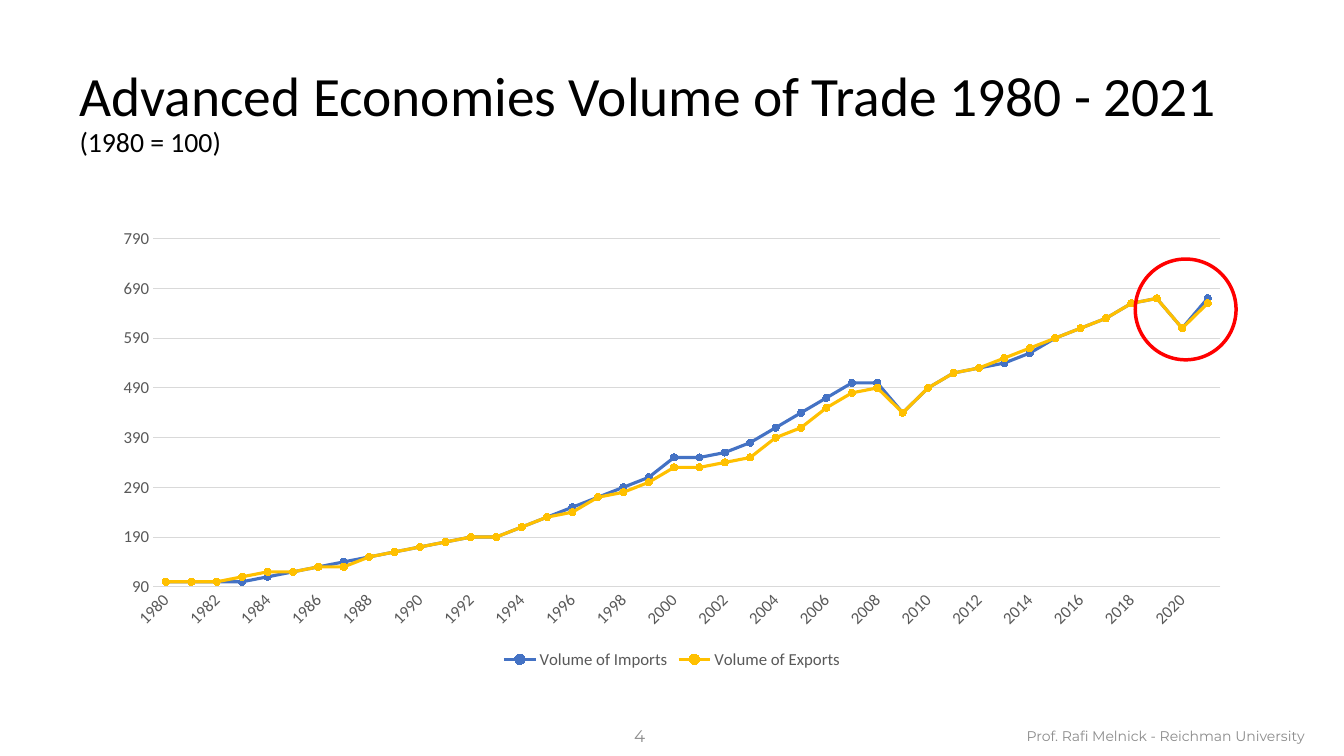
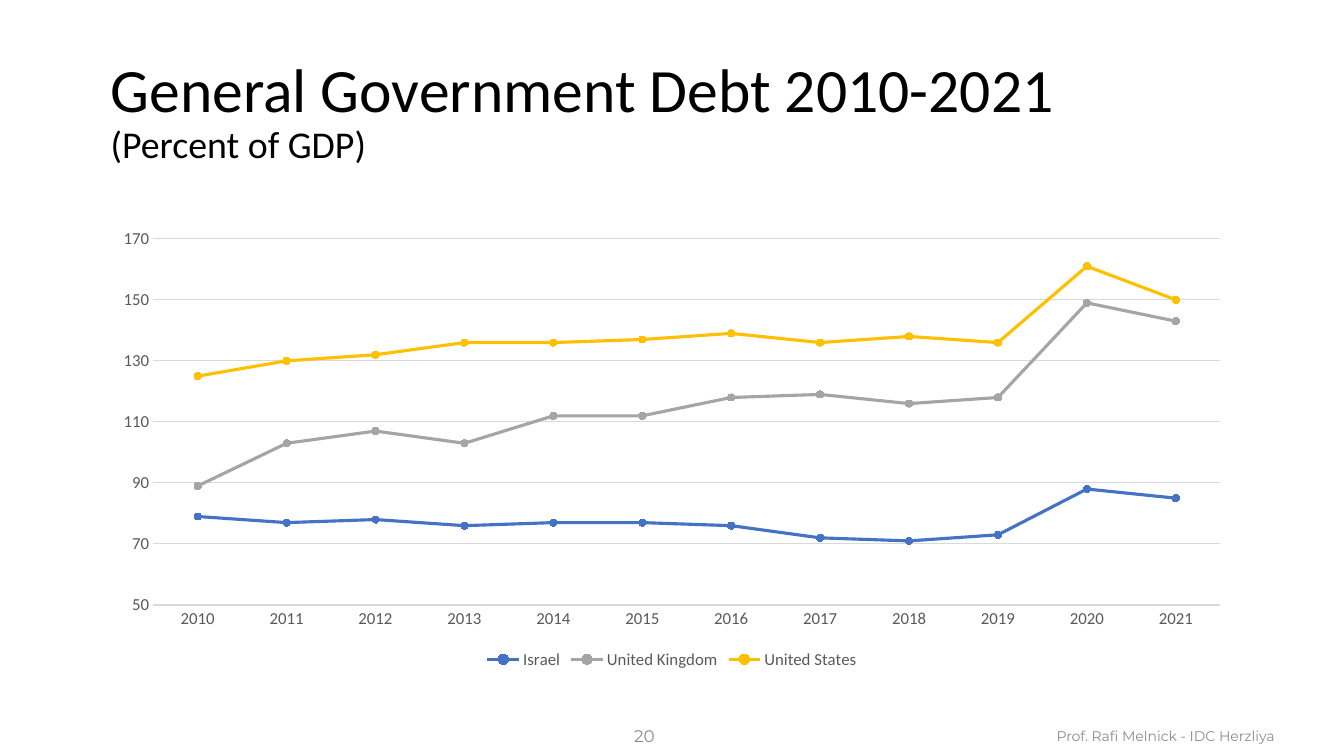
from dataclasses import dataclass

from pptx import Presentation
from pptx.chart.data import CategoryChartData
from pptx.dml.color import RGBColor
from pptx.enum.chart import XL_CHART_TYPE, XL_LEGEND_POSITION, XL_MARKER_STYLE, XL_TICK_MARK
from pptx.enum.shapes import MSO_SHAPE
from pptx.enum.text import MSO_ANCHOR, PP_ALIGN
from pptx.slide import Slide
from pptx.util import Inches, Pt

LINE_CHART = XL_CHART_TYPE.LINE_MARKERS
LEGEND_BOTTOM = XL_LEGEND_POSITION.BOTTOM
CIRCLE_MARKER = XL_MARKER_STYLE.CIRCLE
NO_TICK = XL_TICK_MARK.NONE
OVAL = MSO_SHAPE.OVAL
MIDDLE = MSO_ANCHOR.MIDDLE
LEFT, CENTER = PP_ALIGN.LEFT, PP_ALIGN.CENTER

BLACK = RGBColor(0x00, 0x00, 0x00)
BLUE = RGBColor(0x44, 0x72, 0xC4)
GRAY = RGBColor(0xA5, 0xA5, 0xA5)
GOLD = RGBColor(0xFF, 0xC0, 0x00)
RED = RGBColor(0xFF, 0x00, 0x00)
AXIS_TEXT = RGBColor(0x59, 0x59, 0x59)
GRID = RGBColor(0xD9, 0xD9, 0xD9)
FOOTER_TEXT = RGBColor(0x8C, 0x8C, 0x8C)

BODY_FONT = "Calibri"
FOOTER_FONT = "Montserrat"
BLANK_LAYOUT = 6


@dataclass(frozen=True)
class Area:
    left: float
    top: float
    width: float
    height: float

    def lengths(self) -> tuple:
        return tuple(Inches(n) for n in (self.left, self.top, self.width, self.height))


@dataclass(frozen=True)
class Title:
    text: str
    size: float
    subtitle: str
    subtitle_size: float
    area: Area


@dataclass(frozen=True)
class Series:
    name: str
    color: RGBColor
    values: tuple[int, ...]


@dataclass(frozen=True)
class LineChart:
    years: range
    minimum: int
    maximum: int
    step: int
    series: tuple[Series, ...]
    label_angle: int = 0


@dataclass(frozen=True)
class ChartPage:
    title: Title
    chart: LineChart
    author: str
    number: int
    highlight: Area | None = None


CHART_AREA = Area(1, 2.18, 11.33, 4.5)
AUTHOR_AREA = Area(9.79, 7.1, 3.54, 0.4)
NUMBER_AREA = Area(6.19, 7.1, 0.89, 0.4)

TRADE = ChartPage(
    title=Title("Advanced Economies Volume of Trade 1980 - 2021", 39.6,
                "(1980 = 100)", 19.8, Area(0.69, 0.5, 12.22, 1.25)),
    chart=LineChart(
        range(1980, 2022), 90, 800, 100,
        (
            Series("Volume of Imports", BLUE, (
                100, 100, 100, 100, 110, 120, 130, 140, 150, 160,
                170, 180, 190, 190, 210, 230, 250, 270, 290, 310,
                350, 350, 360, 380, 410, 440, 470, 500, 500, 440,
                490, 520, 530, 540, 560, 590, 610, 630, 660, 670,
                610, 670)),
            Series("Volume of Exports", GOLD, (
                100, 100, 100, 110, 120, 120, 130, 130, 150, 160,
                170, 180, 190, 190, 210, 230, 240, 270, 280, 300,
                330, 330, 340, 350, 390, 410, 450, 480, 490, 440,
                490, 520, 530, 550, 570, 590, 610, 630, 660, 670,
                610, 660)),
        ),
        label_angle=-45,
    ),
    author="Prof. Rafi Melnick - Reichman University",
    number=4,
    highlight=Area(11.26, 2.57, 1, 1),
)

DEBT = ChartPage(
    title=Title("General Government Debt 2010-2021", 44,
                "(Percent of GDP)", 27, Area(1, 0.5, 11.33, 1.25)),
    chart=LineChart(
        range(2010, 2022), 50, 170, 20,
        (
            Series("Israel", BLUE,
                   (79, 77, 78, 76, 77, 77, 76, 72, 71, 73, 88, 85)),
            Series("United Kingdom", GRAY,
                   (89, 103, 107, 103, 112, 112, 118, 119, 116, 118, 149, 143)),
            Series("United States", GOLD,
                   (125, 130, 132, 136, 136, 137, 139, 136, 138, 136, 161, 150)),
        ),
    ),
    author="Prof. Rafi Melnick - IDC Herzliya",
    number=20,
)


def style_font(font, *, name: str, size: float, color: RGBColor) -> None:
    font.name = name
    font.size = Pt(size)
    font.color.rgb = color


def add_text(slide: Slide, area: Area, text: str, *, size: float,
             font: str = BODY_FONT, color: RGBColor = BLACK, align=LEFT,
             line_spacing: float = 1.0):
    """Add a one-paragraph box and return the paragraph."""
    frame = slide.shapes.add_textbox(*area.lengths()).text_frame
    frame.word_wrap = True
    frame.vertical_anchor = MIDDLE
    para = frame.paragraphs[0]
    para.alignment = align
    para.line_spacing = line_spacing
    span = para.add_run()
    span.text = text
    style_font(span.font, name=font, size=size, color=color)
    return para


def add_title(slide: Slide, title: Title) -> None:
    para = add_text(slide, title.area, title.text, size=title.size, line_spacing=0.9)
    para.add_line_break()
    span = para.add_run()
    span.text = title.subtitle
    style_font(span.font, name=BODY_FONT, size=title.subtitle_size, color=BLACK)


def add_footer(slide: Slide, author: str, number: int) -> None:
    add_text(slide, AUTHOR_AREA, author, size=10, font=FOOTER_FONT,
             color=FOOTER_TEXT, align=CENTER)
    add_text(slide, NUMBER_AREA, str(number), size=12, font=FOOTER_FONT,
             color=FOOTER_TEXT)


def style_line(line, color: RGBColor, width: float) -> None:
    line.color.rgb = color
    line.width = Pt(width)


def style_axes(chart, content: LineChart) -> None:
    years, values = chart.category_axis, chart.value_axis
    for axis in (years, values):
        axis.major_tick_mark = axis.minor_tick_mark = NO_TICK
        style_font(axis.tick_labels.font, name=BODY_FONT, size=12, color=AXIS_TEXT)
    style_line(years.format.line, GRID, 0.75)
    if content.label_angle:
        body = years._element.txPr.bodyPr
        body.set("rot", str(content.label_angle * 60000))
    values.minimum_scale = content.minimum
    values.maximum_scale = content.maximum
    values.major_unit = content.step
    values.format.line.fill.background()
    style_line(values.major_gridlines.format.line, GRID, 0.75)


def add_line_chart(slide: Slide, content: LineChart) -> None:
    data = CategoryChartData(number_format="0")
    data.categories = [str(year) for year in content.years]
    for series in content.series:
        data.add_series(series.name, series.values)
    chart = slide.shapes.add_chart(LINE_CHART, *CHART_AREA.lengths(), data).chart
    style_font(chart.font, name=BODY_FONT, size=10, color=BLACK)
    chart.has_title = False
    chart.has_legend = True
    chart.legend.position = LEGEND_BOTTOM
    chart.legend.include_in_layout = False
    style_font(chart.legend.font, name=BODY_FONT, size=12, color=AXIS_TEXT)
    style_axes(chart, content)

    plot = chart.plots[0]
    plot.vary_by_categories = False
    for curve, series in zip(plot.series, content.series):
        curve.smooth = False
        style_line(curve.format.line, series.color, 2.25)
        marker = curve.marker
        marker.style = CIRCLE_MARKER
        marker.size = 5
        marker.format.fill.solid()
        marker.format.fill.fore_color.rgb = series.color
        style_line(marker.format.line, series.color, 0.75)


def add_highlight(slide: Slide, area: Area) -> None:
    ring = slide.shapes.add_shape(OVAL, *area.lengths())
    ring.shadow.inherit = False
    ring.fill.background()
    style_line(ring.line, RED, 2.5)


def add_page(deck, page: ChartPage) -> None:
    slide = deck.slides.add_slide(deck.slide_layouts[BLANK_LAYOUT])
    add_line_chart(slide, page.chart)
    add_footer(slide, page.author, page.number)
    add_title(slide, page.title)
    if page.highlight:
        add_highlight(slide, page.highlight)


def main() -> None:
    deck = Presentation()
    deck.slide_width = Inches(13.33)
    deck.slide_height = Inches(7.5)
    for page in (TRADE, DEBT):
        add_page(deck, page)
    deck.save("out.pptx")


if __name__ == "__main__":
    main()
